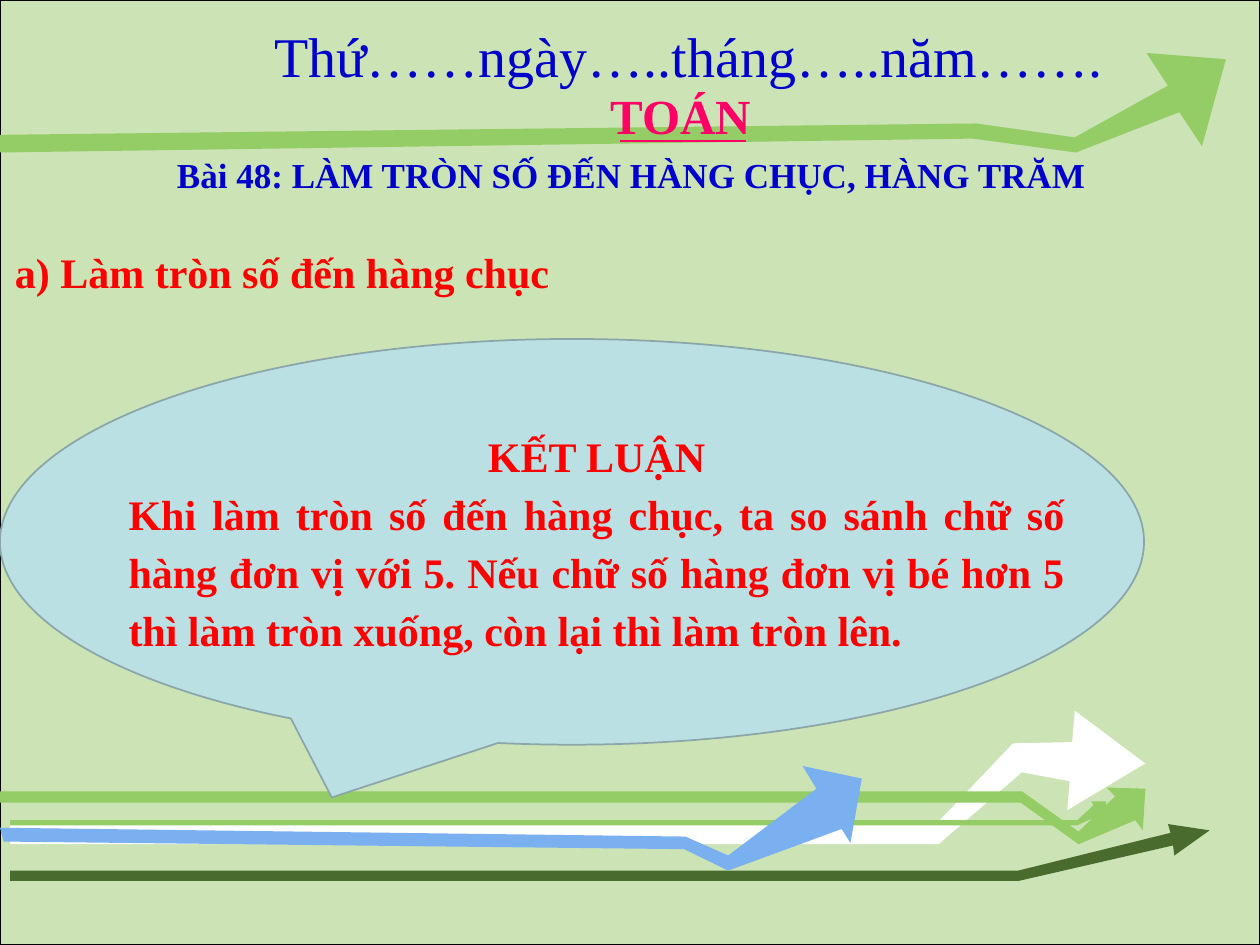
import pptx
import pptx.dml.color
import pptx.enum.shapes
import pptx.enum.text
import pptx.oxml.xmlchemy
import pptx.util

WIDTH, HEIGHT = 10, 7.5
FONT = "Times New Roman"
RED, BLUE, PINK = "FF0000", "0000CC", "FF0066"
GREEN, DARK_GREEN, SKY, WHITE = "94CC66", "496B2E", "7AAFF0", "FFFFFF"
HUNDREDTH = 9144

ARROWS = [
    (WHITE, [(8, 653), (744, 653), (804, 590), (851, 589), (853, 564), (909, 606),
             (847, 643), (849, 620), (811, 613), (745, 670), (8, 670)]),
    (GREEN, [(8, 651), (855, 651), (868, 639), (866, 636), (878, 636), (877, 650),
             (874, 646), (875, 646), (855, 655), (8, 655)]),
    (GREEN, [(0, 628), (811, 628), (856, 660), (885, 632), (878, 625), (909, 626),
             (907, 659), (901, 651), (856, 670), (810, 637), (0, 637)]),
    (DARK_GREEN, [(8, 691), (808, 691), (929, 661), (927, 654), (960, 659), (932, 679),
                  (931, 671), (809, 699), (8, 699)]),
    (SKY, [(3, 668), (543, 674), (578, 691), (668, 658), (675, 669), (684, 618),
           (637, 608), (648, 626), (578, 679), (544, 664), (0, 657)]),
    (GREEN, [(0, 121), (772, 110), (854, 121), (936, 89), (954, 116), (973, 47),
             (910, 42), (927, 68), (853, 109), (775, 98), (0, 107)]),
]


def color(value):
    return pptx.dml.color.RGBColor.from_string(value)


def inches(values):
    return [pptx.util.Inches(value) for value in values]


def apply_format(target, values):
    for name, value in values.items():
        setattr(target, name, value)


def paint(shape, fill, line=None, width=1):
    shape.shadow.inherit = False
    shape.fill.solid()
    shape.fill.fore_color.rgb = color(fill)
    if line:
        shape.line.color.rgb = color(line)
        shape.line.width = pptx.util.Pt(width)
    else:
        shape.line.fill.background()


def add_preset(slide, kind, box, fill, line, width):
    shape = slide.shapes.add_shape(kind, *inches(box))
    paint(shape, fill, line, width)
    return shape


def add_bent_arrow(slide, fill, points):
    builder = slide.shapes.build_freeform(*points[0], scale=HUNDREDTH)
    builder.add_line_segments(points[1:], close=True)
    paint(builder.convert_to_shape(), fill)


def add_underline(slide, start, end, value):
    line = slide.shapes.add_connector(
        pptx.enum.shapes.MSO_CONNECTOR.STRAIGHT, *inches(start + end))
    line.line.color.rgb = color(value)
    line.line.width = pptx.util.Pt(1)
    line._element.spPr.append(pptx.oxml.xmlchemy.OxmlElement("a:effectLst"))


def write_paragraph(paragraph, text, size, value, bold=True, **layout):
    run = paragraph.add_run()
    run.text = text
    apply_format(run.font, {"name": FONT, "size": pptx.util.Pt(size), "bold": bold})
    run.font.color.rgb = color(value)
    apply_format(paragraph, layout)


def add_label(slide, box, text, size, value, bold=True):
    label = slide.shapes.add_textbox(*inches(box))
    label.text_frame.word_wrap = False
    write_paragraph(label.text_frame.paragraphs[0], text, size, value, bold)


def place_placeholder(slide, placeholder, box):
    slide.shapes._spTree.append(placeholder._element)
    apply_format(placeholder, dict(zip(("left", "top", "width", "height"), inches(box))))
    apply_format(placeholder.text_frame, {
        "word_wrap": True,
        "auto_size": pptx.enum.text.MSO_AUTO_SIZE.NONE,
        "vertical_anchor": pptx.enum.text.MSO_ANCHOR.TOP,
    })
    return placeholder.text_frame


def remove_bullet(paragraph):
    properties = paragraph._p.get_or_add_pPr()
    properties.set("marL", "0")
    properties.set("indent", "0")
    properties.append(pptx.oxml.xmlchemy.OxmlElement("a:buNone"))


def add_conclusion(slide, body):
    align = pptx.enum.text.PP_ALIGN
    callout = add_preset(slide, pptx.enum.shapes.MSO_SHAPE.OVAL_CALLOUT,
                         (0, 2.69, 9.08, 3.22), "BBE0E3", "8AA6A8", 1)
    callout.adjustments[0] = -0.21
    callout.adjustments[1] = 0.63
    frame = place_placeholder(slide, body, (0.92, 3.31, 7.63, 1.61))
    lines = [
        ("KẾT LUẬN", align.CENTER),
        ("Khi làm tròn số đến hàng chục, ta so sánh chữ số hàng đơn vị với 5. "
         "Nếu chữ số hàng đơn vị bé hơn 5 thì làm tròn xuống, còn lại thì làm tròn lên.",
         align.JUSTIFY),
    ]
    for index, (text, alignment) in enumerate(lines):
        paragraph = frame.add_paragraph() if index else frame.paragraphs[0]
        write_paragraph(paragraph, text, 24, RED, alignment=alignment,
                        line_spacing=1.15, space_before=pptx.util.Pt(0))
        remove_bullet(paragraph)


def add_lesson_title(slide, title):
    frame = place_placeholder(slide, title, (0.25, 1.14, 9.52, 0.49))
    margins = {"margin_left": 0.16, "margin_right": 0.16,
               "margin_top": 0.08, "margin_bottom": 0.08}
    apply_format(frame, dict(zip(margins, inches(margins.values()))))
    write_paragraph(frame.paragraphs[0], "Bài 48: LÀM TRÒN SỐ ĐẾN HÀNG CHỤC, HÀNG TRĂM",
                    20, BLUE, alignment=pptx.enum.text.PP_ALIGN.CENTER)


def main():
    presentation = pptx.Presentation()
    presentation.slide_width, presentation.slide_height = inches((WIDTH, HEIGHT))
    slide = presentation.slides.add_slide(presentation.slide_layouts[1])
    title, body = slide.placeholders
    add_preset(slide, pptx.enum.shapes.MSO_SHAPE.RECTANGLE,
               (0, 0, WIDTH, HEIGHT), "CBE3B5", "000000", 0.75)
    for fill, points in ARROWS:
        add_bent_arrow(slide, fill, points)
    add_conclusion(slide, body)
    add_label(slide, (0.02, 1.91, 4.57, 0.51), "a) Làm tròn số đến hàng chục", 24, RED)
    add_label(slide, (2.08, 0.12, 6.84, 0.64), "Thứ……ngày…..tháng…..năm…….", 32, BLUE, False)
    add_label(slide, (4.75, 0.63, 1.33, 0.57), "TOÁN", 28, PINK)
    add_underline(slide, (4.92, 1.12), (5.92, 1.12), PINK)
    add_lesson_title(slide, title)
    presentation.save("out.pptx")


if __name__ == "__main__":
    main()
